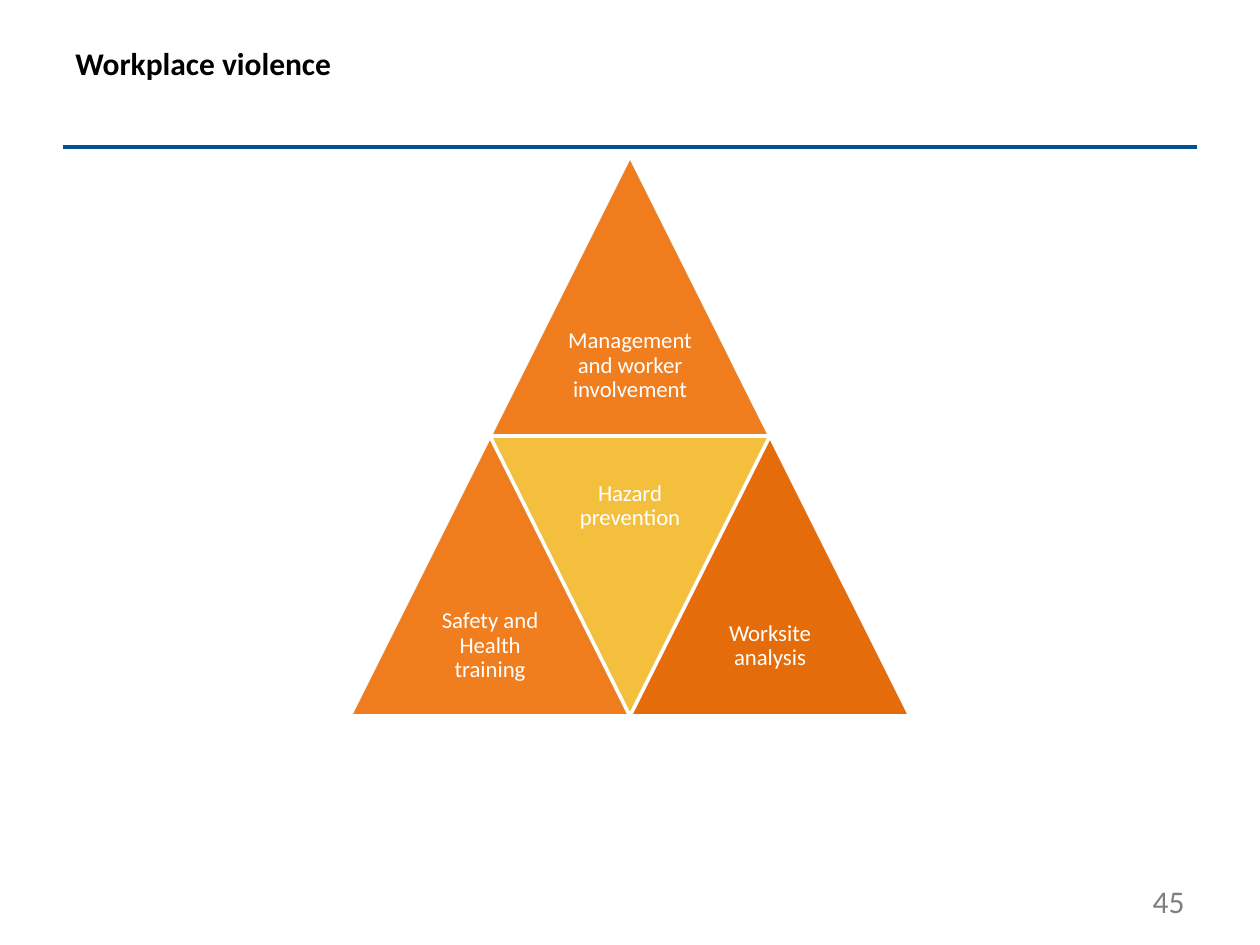
from dataclasses import dataclass

from lxml.etree import SubElement
from pptx import Presentation
from pptx.dml.color import RGBColor
from pptx.enum.shapes import MSO_CONNECTOR, MSO_SHAPE
from pptx.enum.text import MSO_ANCHOR, PP_ALIGN
from pptx.oxml.ns import qn
from pptx.util import Pt

EMU_PER_PX = 914400 / 126


@dataclass(frozen=True)
class Theme:
    font: str = "Calibri"
    black: str = "000000"
    white: str = "FFFFFF"
    gray: str = "7F7F7F"
    blue: str = "005294"
    orange: str = "F07D1E"
    dark_orange: str = "E46C0A"
    yellow: str = "F3BF3D"
    heading_size: int = 18
    label_size: int = 13
    line_width: int = 2


@dataclass(frozen=True)
class Box:
    left: int
    top: int
    width: int
    height: int

    def emu(self) -> tuple[int, ...]:
        return tuple(px(v) for v in (self.left, self.top, self.width, self.height))


@dataclass(frozen=True)
class Triangle:
    """One part of the pyramid, placed in half sides across and sides down."""
    label: str
    fill: str
    column: int
    row: int
    inverted: bool = False


THEME = Theme()
SIDE = 280
PYRAMID_LEFT, PYRAMID_TOP = 350, 156
TRIANGLES = (
    Triangle("Management and worker involvement", THEME.orange, 1, 0),
    Triangle("Safety and Health training", THEME.orange, 0, 1),
    Triangle("Hazard prevention", THEME.yellow, 1, 1, inverted=True),
    Triangle("Worksite analysis", THEME.dark_orange, 2, 1),
)


def px(value: int) -> int:
    return round(value * EMU_PER_PX)


def set_attributes(target, values: dict) -> None:
    for name, value in values.items():
        setattr(target, name, value)


def add_text(shapes, box: Box, text: str, size: int, color: str,
             frame_format: dict, paragraph_format: dict, bold: bool = False) -> None:
    frame = shapes.add_textbox(*box.emu()).text_frame
    set_attributes(frame, {"word_wrap": True, **frame_format})
    paragraph = frame.paragraphs[0]
    set_attributes(paragraph, paragraph_format)
    run = paragraph.add_run()
    run.text = text
    set_attributes(run.font, {"name": THEME.font, "size": Pt(size), "bold": bold})
    run.font.color.rgb = RGBColor.from_string(color)


def add_rule(shapes, left: int, right: int, y: int) -> None:
    rule = shapes.add_connector(MSO_CONNECTOR.STRAIGHT, px(left), px(y), px(right), px(y))
    rule.line.width = Pt(THEME.line_width)
    rule.line.color.rgb = RGBColor.from_string(THEME.blue)
    SubElement(rule._element.spPr, qn("a:effectLst"))


def add_triangle(shapes, triangle: Triangle) -> None:
    half = SIDE // 2
    left = PYRAMID_LEFT + triangle.column * half
    top = PYRAMID_TOP + triangle.row * SIDE
    shape = shapes.add_shape(MSO_SHAPE.ISOSCELES_TRIANGLE, *Box(left, top, SIDE, SIDE).emu())
    shape.rotation = 180 if triangle.inverted else 0
    shape.shadow.inherit = False
    shape.fill.solid()
    shape.fill.fore_color.rgb = RGBColor.from_string(triangle.fill)
    shape.line.color.rgb = RGBColor.from_string(THEME.white)
    shape.line.width = Pt(THEME.line_width)

    label_top = top if triangle.inverted else top + half
    margins = {f"margin_{edge}": px(6) for edge in ("left", "top", "right", "bottom")}
    add_text(shapes, Box(left + half // 2, label_top, half, half), triangle.label,
             THEME.label_size, THEME.white,
             {"vertical_anchor": MSO_ANCHOR.MIDDLE, **margins},
             {"alignment": PP_ALIGN.CENTER, "line_spacing": 0.9})


def main() -> None:
    presentation = Presentation()
    set_attributes(presentation, {"slide_width": px(1260), "slide_height": px(945)})
    slide = presentation.slides.add_slide(presentation.slide_layouts[6])
    add_rule(slide.shapes, 63, 1197, 147)
    add_text(slide.shapes, Box(63, 38, 1134, 109), "Workplace violence",
             THEME.heading_size, THEME.black,
             {"vertical_anchor": MSO_ANCHOR.TOP}, {"alignment": PP_ALIGN.LEFT}, bold=True)
    add_text(slide.shapes, Box(903, 876, 294, 50), "45",
             THEME.heading_size, THEME.gray,
             {"vertical_anchor": MSO_ANCHOR.MIDDLE}, {"alignment": PP_ALIGN.RIGHT})
    pyramid = slide.shapes.add_group_shape()
    for triangle in TRIANGLES:
        add_triangle(pyramid.shapes, triangle)
    presentation.save("out.pptx")


if __name__ == "__main__":
    main()
